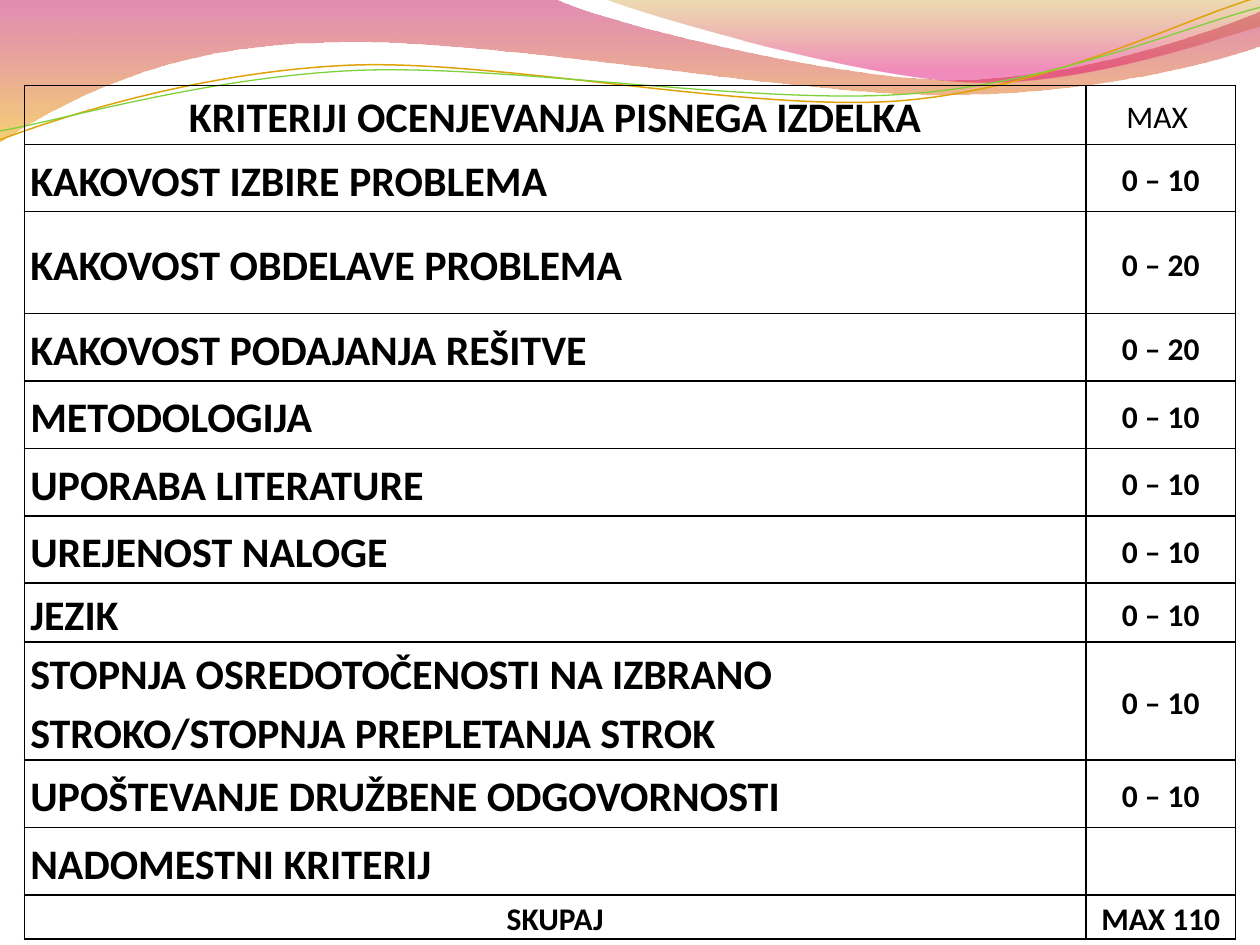
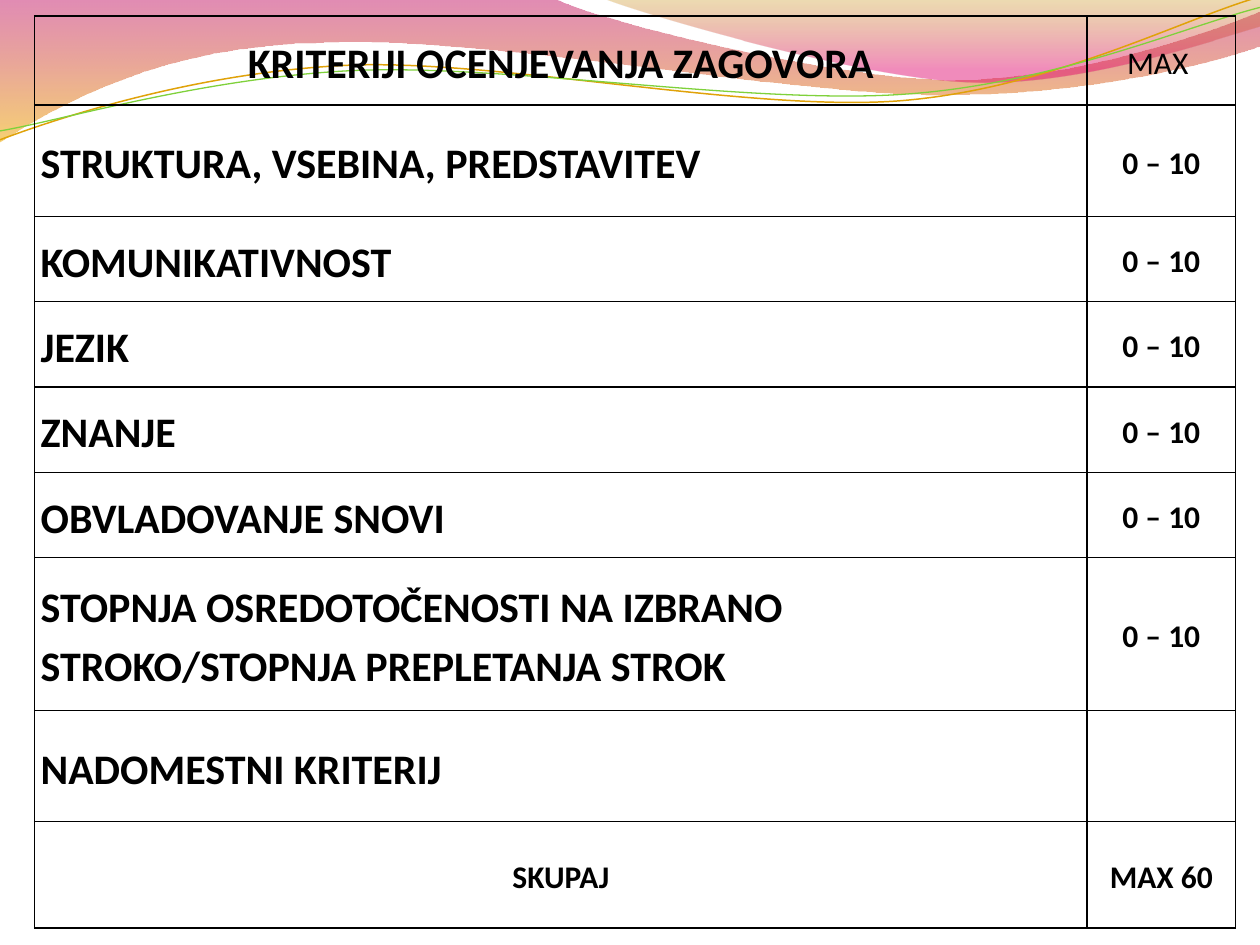
from dataclasses import dataclass

from lxml.etree import SubElement
from pptx import Presentation
from pptx.dml.color import RGBColor as RGB
from pptx.enum.text import MSO_ANCHOR as ANCHOR, PP_ALIGN as ALIGN
from pptx.oxml.ns import qn
from pptx.util import Cm, Pt


@dataclass(frozen=True)
class Theme:
    font: str = "Calibri"
    ink: str = "000000"
    orange: str = "E0A209"
    green: str = "7FD13B"
    wide_wave: tuple = ((0, "BD0059", 45), (1, "F0AB00", 55))
    corner_wave: tuple = ((0, "C38B00", 30), (0.8, "E1006B", 45))
    large: int = 24
    small: int = 18
    spacing: float = 1.15
    border: int = 1
    tilt: float = -2.7


WIDE_WAVE = [
    [(0, -0.03)], [(11.18, -0.03)],
    [(12.09, 0.43), (16.87, 1.6), (19.25, 1.6)],
    [(21.67, 1.6), (24.33, 0.66), (25.4, 0.23)],
    [(25.43, 0.91)],
    [(24.97, 1.12), (22.1, 1.93), (18.95, 1.91)],
    [(15.8, 1.91), (9.7, 0.71), (6.53, 0.86)],
    [(3.28, 0.89), (1.17, 2.11), (-0.03, 2.87)],
    [(0, -0.03)],
]
CORNER_WAVE = [
    [(12.17, -0.03)],
    [(12.93, 0.28), (17.32, 1.57), (19.53, 1.65)],
    [(21.74, 1.75), (24.41, 0.81), (25.4, 0.53)],
    [(25.4, 0)], [(12.17, -0.03)],
]
ORANGE_CURVE = [
    [(-0.05, 2.22)],
    [(1.19, 1.82), (4.01, 1.04), (7.06, 1.05)],
    [(10.06, 1.07), (15.01, 2.37), (18.08, 2.29)],
    [(21.13, 2.2), (23.88, 0.91), (25.4, 0.55)],
]
GREEN_CURVE = [
    [(-0.04, 2.04)],
    [(1.16, 1.9), (4.17, 1.15), (7.2, 1.16)],
    [(10.25, 1.18), (15.13, 2.23), (18.19, 2.16)],
    [(21.21, 2.1), (23.93, 1.06), (25.45, 0.75)],
]

FOCUS = "STOPNJA OSREDOTOČENOSTI NA IZBRANO STROKO/STOPNJA PREPLETANJA STROK"
SPARE = "NADOMESTNI KRITERIJ"
TEN, TWENTY = "0 – 10", "0 – 20"

WRITTEN_WORK = [
    (1.09, "KRITERIJI OCENJEVANJA PISNEGA IZDELKA", "MAX "),
    (1.36, "KAKOVOST IZBIRE PROBLEMA", TEN),
    (2.05, "KAKOVOST OBDELAVE PROBLEMA", TWENTY),
    (1.36, "KAKOVOST PODAJANJA REŠITVE", TWENTY),
    (1.36, "METODOLOGIJA", TEN),
    (1.36, "UPORABA LITERATURE", TEN),
    (1.36, "UREJENOST NALOGE", TEN),
    (1.09, "JEZIK", TEN),
    (2.18, FOCUS, TEN),
    (1.36, "UPOŠTEVANJE DRUŽBENE ODGOVORNOSTI", TEN),
    (1.36, SPARE, ""),
    (0.81, "SKUPAJ", "MAX 110"),
]
DEFENCE = [
    (1.8, "KRITERIJI OCENJEVANJA ZAGOVORA", "MAX "),
    (2.24, "STRUKTURA, VSEBINA, PREDSTAVITEV", TEN),
    (1.72, "KOMUNIKATIVNOST", TEN),
    (1.72, "JEZIK", TEN),
    (1.72, "ZNANJE", TEN),
    (1.72, "OBVLADOVANJE SNOVI", TEN),
    (3.08, FOCUS, TEN),
    (2.24, SPARE, ""),
    (2.15, "SKUPAJ", "MAX 60"),
]


class Deck:
    """Holds the theme and the current slide, and draws elements on it."""

    def __init__(self, prs, theme):
        self.prs, self.theme, self.slide = prs, theme, None

    def add_slide(self):
        """Start a blank slide with the wave decoration."""
        t = self.theme
        self.slide = self.prs.slides.add_slide(self.prs.slide_layouts[6])
        self.wave(WIDE_WAVE, t.wide_wave)
        self.wave(CORNER_WAVE, t.corner_wave)
        self.curve(ORANGE_CURVE, t.orange, 0.85)
        self.curve(GREEN_CURVE, t.green, 0.75)

    def outline(self, segments, close):
        """Add a freeform whose three-point segments are Bézier curves."""
        start, *rest = [(Cm(x), Cm(y)) for segment in segments for x, y in segment]
        fb = self.slide.shapes.build_freeform(*start)
        fb.add_line_segments(rest, close=close)
        sp = fb.convert_to_shape()
        sp.shadow.inherit = False
        lines = iter(list(sp.element.spPr.iter(qn("a:lnTo"))))
        for segment in segments[1:]:
            first, *others = [next(lines) for _ in segment]
            if others:
                bezier = first.makeelement(qn("a:cubicBezTo"))
                first.addprevious(bezier)
                for line in (first, *others):
                    bezier.append(line[0])
                    line.getparent().remove(line)
        return sp

    def wave(self, segments, stops):
        """Add a closed wave with a translucent downward gradient."""
        sp = self.outline(segments, True)
        sp.line.fill.background()
        sp.fill.gradient()
        sp.fill.gradient_angle = 270
        for stop, (position, color, _) in zip(sp.fill.gradient_stops, stops):
            stop.position = position
            stop.color.rgb = RGB.from_string(color)
        for clr, (_, _, opacity) in zip(sp.element.spPr.iter(qn("a:srgbClr")), stops):
            SubElement(clr, qn("a:alpha"), val=str(opacity * 1000))

    def curve(self, segments, color, width):
        """Add an open, slightly tilted curved line."""
        sp = self.outline(segments, False)
        sp.rotation = self.theme.tilt
        sp.fill.background()
        sp.line.color.rgb = RGB.from_string(color)
        sp.line.width = Pt(width)

    def cell(self, cell, text, size, align, bold):
        """Write and style one bordered cell."""
        t = self.theme
        cell.margin_left = cell.margin_right = Cm(0.12)
        cell.margin_top = cell.margin_bottom = 0
        cell.vertical_anchor = ANCHOR.MIDDLE
        p = cell.text_frame.paragraphs[0]
        p.text, p.alignment, p.line_spacing = text, align, t.spacing
        p.font.name, p.font.size, p.font.bold = t.font, Pt(size), bold
        p.font.color.rgb = RGB.from_string(t.ink)
        tcPr = cell._tc.get_or_add_tcPr()
        for side in "LRTB":
            ln = SubElement(tcPr, qn(f"a:ln{side}"), w=str(Pt(t.border)))
            SubElement(SubElement(ln, qn("a:solidFill")), qn("a:srgbClr"), val=t.ink)
        cell.fill.background()

    def criteria(self, left, top, widths, rows):
        """Add a table of criteria with heading and total rows."""
        t = self.theme
        height = sum(row[0] for row in rows)
        table = self.slide.shapes.add_table(
            len(rows), 2, Cm(left), Cm(top), Cm(sum(widths)), Cm(height)).table
        table.first_row = table.horz_banding = False
        for column, width in zip(table.columns, widths):
            column.width = Cm(width)
        last = len(rows) - 1
        for i, (height, criterion, points) in enumerate(rows):
            table.rows[i].height = Cm(height)
            self.cell(table.cell(i, 0), criterion, t.small if i == last else t.large,
                      ALIGN.CENTER if i in (0, last) else ALIGN.LEFT, True)
            self.cell(table.cell(i, 1), points, t.small, ALIGN.CENTER, i > 0)


def main():
    """Build both slides and save them."""
    prs = Presentation()
    prs.slide_width, prs.slide_height = Cm(25.4), Cm(19.05)
    deck = Deck(prs, Theme())
    deck.add_slide()
    deck.criteria(0.49, 1.72, (21.4, 3.02), WRITTEN_WORK)
    deck.add_slide()
    deck.criteria(0.7, 0.32, (21.21, 3), DEFENCE)
    prs.save("out.pptx")


if __name__ == "__main__":
    main()
